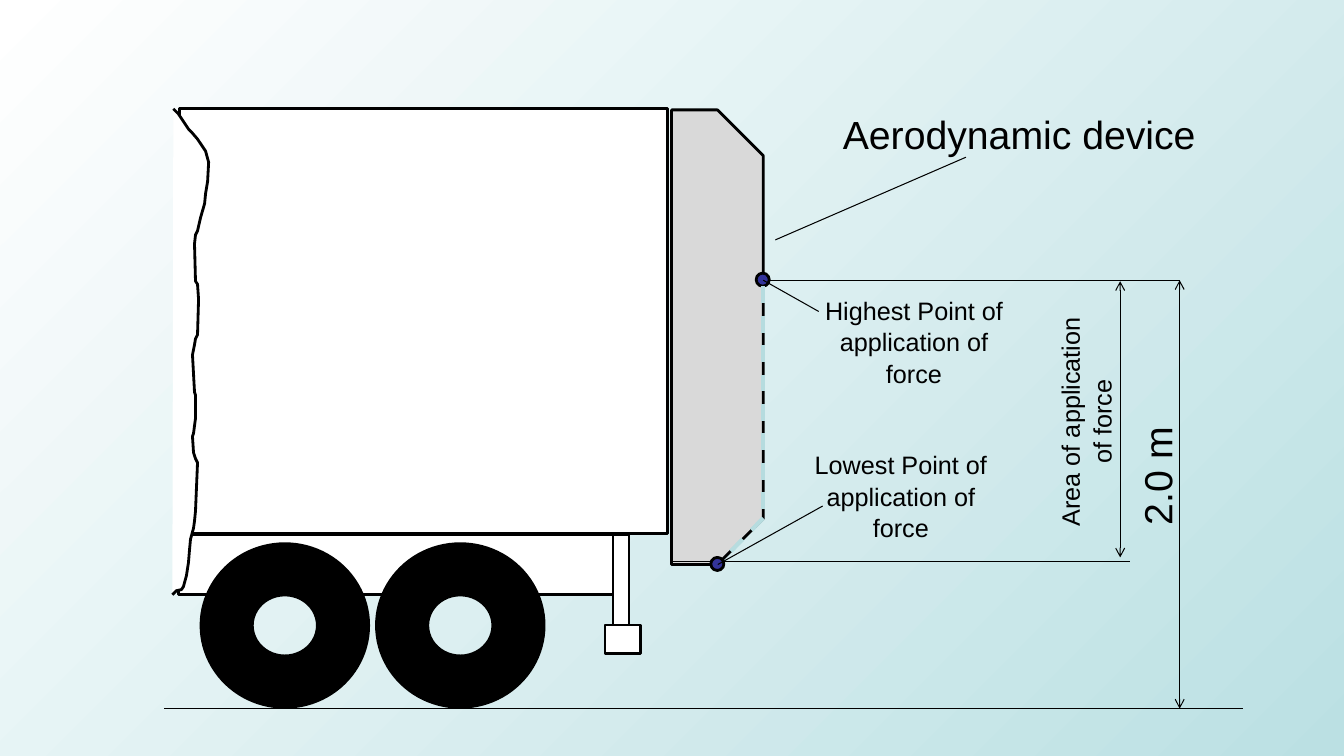
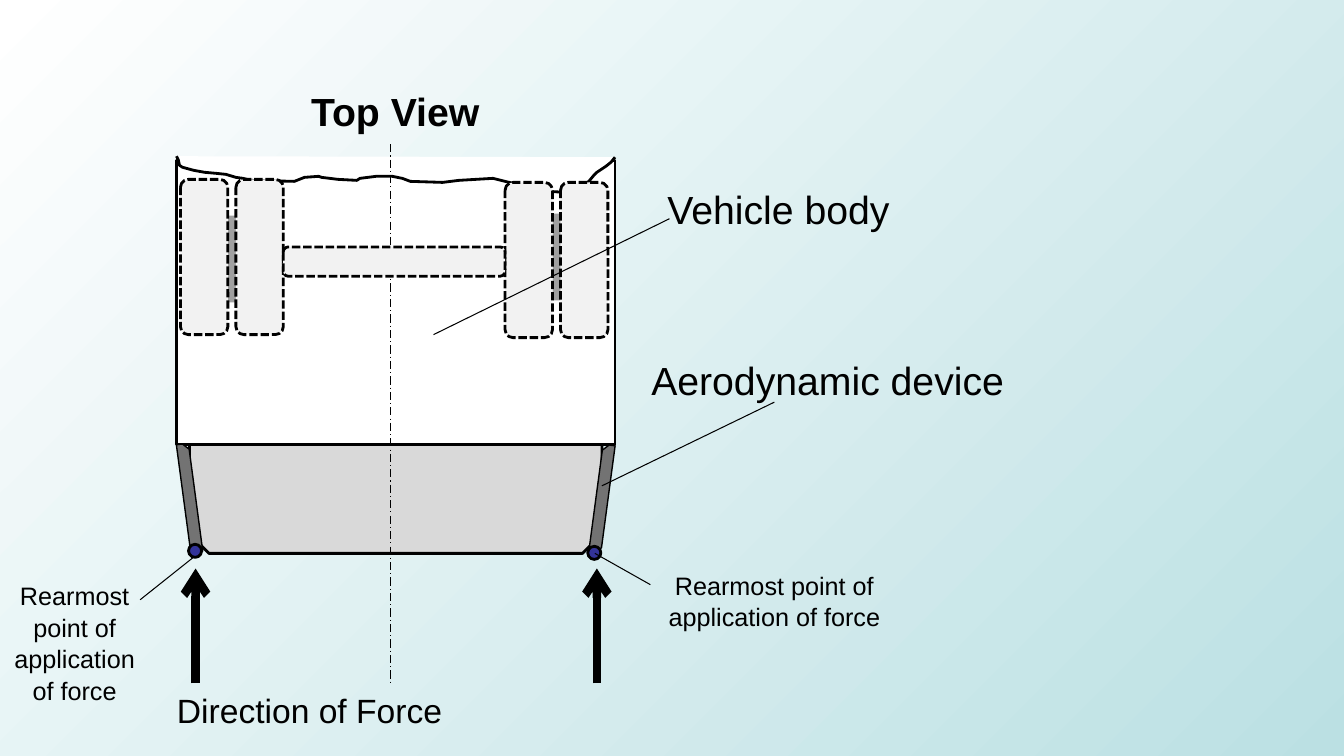
from lxml.etree import SubElement as Sub
from pptx import Presentation
from pptx.dml.color import RGBColor
from pptx.enum.dml import MSO_LINE as Dash
from pptx.enum.shapes import MSO_CONNECTOR as Wire, MSO_SHAPE as Kind
from pptx.enum.text import MSO_ANCHOR as Anchor, PP_ALIGN as Align
from pptx.oxml.ns import qn
from pptx.util import Inches, Pt

BLACK, WHITE, TINT = "000000", "FFFFFF", "BBE0E3"
PANEL, WHEEL, HUB, SLAT = "D9D9D9", "F2F2F2", "A0A0A0", "737373"
POINT, HIDDEN = "333399", "B6DCDF"
DOT = 0.13

# Torn edges of the vehicle body, in hundredths of an inch
SIDE_TEAR = [
    (172, 108), (177, 113), (181, 119), (187, 128), (190, 131), (196, 138),
    (202, 147), (204, 150), (207, 161), (206, 180), (204, 192), (203, 202),
    (199, 216), (196, 229), (194, 233), (193, 242), (194, 279), (196, 282),
    (197, 297), (196, 332), (194, 336), (193, 342), (191, 352), (193, 389),
    (194, 392), (194, 415), (192, 430), (191, 433), (192, 449), (194, 455),
    (196, 459), (194, 507), (193, 517), (192, 524), (189, 535), (188, 546),
    (187, 558), (185, 571), (182, 582), (180, 585), (175, 586), (171, 590)]
TOP_TEAR = [
    (610, 156), (606, 161), (601, 165), (592, 171), (589, 174), (584, 180),
    (575, 186), (572, 188), (563, 191), (545, 190), (535, 188), (525, 187),
    (513, 183), (501, 180), (489, 177), (455, 179), (439, 181), (407, 180),
    (399, 177), (389, 175), (373, 175), (357, 177), (354, 179), (335, 178),
    (319, 176), (316, 175), (302, 176), (292, 180), (249, 179), (241, 177),
    (234, 176), (224, 173), (214, 172), (203, 171), (192, 169), (181, 166),
    (178, 164), (177, 159), (175, 155)]


def color(code):
    return RGBColor.from_string(code)


class Deck:
    """Drawing style and the slide being drawn."""

    def __init__(self):
        self.prs = Presentation()
        self.prs.slide_width, self.prs.slide_height = Inches(13.33), Inches(7.5)
        fill = self.prs.slide_master.background.fill
        fill.gradient()
        fill.gradient_angle = 315
        for stop, code, place in zip(fill.gradient_stops, (WHITE, TINT), (0, 1)):
            stop.color.rgb = color(code)
            stop.position = place

    def page(self):
        self.slide = self.prs.slides.add_slide(self.prs.slide_layouts[6])

    def paint(self, shape, fill, width, dash=None):
        shape.shadow.inherit = False
        shape.fill.solid()
        shape.fill.fore_color.rgb = color(fill)
        if width:
            self.pen(shape.line, BLACK, width, dash)
        else:
            shape.line.fill.background()

    def pen(self, line, code, width, dash):
        line.color.rgb = color(code)
        line.width = Pt(width)
        if dash:
            line.dash_style = dash

    def shape(self, kind, x, y, w, h, fill=WHITE, width=2, dash=None,
              adj=(), turn=0):
        item = self.slide.shapes.add_shape(kind, *map(Inches, (x, y, w, h)))
        self.paint(item, fill, width, dash)
        for i, value in enumerate(adj):
            item.adjustments[i] = value
        item.rotation = turn

    def dot(self, x, y):
        self.shape(Kind.OVAL, x, y, DOT, DOT, POINT)

    def tear(self, points):
        """Draw an open white outline through the points."""
        form = self.slide.shapes.build_freeform(*points[0], scale=Inches(0.01))
        form.add_line_segments(points[1:], close=False)
        self.paint(form.convert_to_shape(), WHITE, 2)

    def line(self, x1, y1, x2, y2, code=BLACK, width=0.75, dash=None, ends=()):
        """Draw a line; ends names the arrowed ends, headEnd before tailEnd."""
        item = self.slide.shapes.add_connector(
            Wire.STRAIGHT, *map(Inches, (x1, y1, x2, y2)))
        self.pen(item.line, code, width, dash)
        props = item._element.spPr
        for end in ends:
            Sub(props.find(qn("a:ln")), qn("a:" + end), type="arrow")
        Sub(props, qn("a:effectLst"))

    def text(self, words, x, y, w, h, size=18, align=Align.CENTER, bold=False,
             turn=0, wrap=True, inset=(0, 0)):
        box = self.slide.shapes.add_textbox(*map(Inches, (x, y, w, h)))
        box.rotation = turn
        frame = box.text_frame
        frame.word_wrap = wrap
        frame.vertical_anchor = Anchor.TOP
        frame.margin_left = frame.margin_right = Inches(inset[0])
        frame.margin_top = frame.margin_bottom = Inches(inset[1])
        para = frame.paragraphs[0]
        para.alignment, para.line_spacing = align, 1.05
        run = para.add_run()
        run.text = words
        font = run.font
        font.name, font.size, font.bold = "Arial", Pt(size), bold
        font.color.rgb = color(BLACK)

    def label(self, words, x, y, **style):
        self.text(words, x, y, 3.86, 0.63, size=28,
                  **{"align": Align.LEFT, **style})


def side(deck):
    """Side view with the heights of the force points."""
    deck.page()
    both = ("headEnd", "tailEnd")
    deck.line(1.63, 7.03, 12.33, 7.03)
    deck.shape(Kind.RECTANGLE, 1.78, 1.08, 4.84, 4.21)
    deck.shape(Kind.RECTANGLE, 1.77, 5.3, 4.47, 0.6)
    for x in (3.72, 1.98):
        deck.shape(Kind.DONUT, x, 5.38, 1.69, 1.65, BLACK, 0, adj=[0.325])
    deck.tear(SIDE_TEAR)
    deck.shape(Kind.RECTANGLE, 6.08, 5.3, 0.16, 1.02)
    deck.shape(Kind.RECTANGLE, 6, 6.2, 0.35, 0.28)
    deck.shape(Kind.SNIP_2_SAME_RECTANGLE, 4.86, 2.89, 4.51, 0.91, PANEL,
               adj=[0.5, 0], turn=90)

    deck.line(11.7, 2.78, 11.7, 7.03, ends=both)
    deck.line(7.5, 2.78, 11.7, 2.78)
    deck.text("2.0 m", 10.24, 4.48, 2.44, 0.49, size=28, turn=270)
    deck.label("Aerodynamic device", 8.36, 1.07)
    deck.line(7.69, 2.38, 9.58, 1.56)
    deck.line(6.67, 5.57, 11.21, 5.57)
    deck.line(11.11, 2.79, 11.11, 5.53, ends=both)

    deck.text("Lowest Point of application of force", 7.95, 4.44, 1.97, 1.15)
    deck.dot(7.05, 5.53)
    deck.line(8.16, 5.02, 7.12, 5.6)
    deck.text("Highest Point of application of force", 8.04, 2.91, 2.05, 1.15)
    deck.dot(7.5, 2.71)
    deck.line(8.12, 3.09, 7.57, 2.78)
    deck.text("Area of application of force", 9.9, 3.61, 2.24, 1.15, turn=270)
    for ends in ((7.57, 2.84, 7.57, 5.14), (7.57, 5.14, 7.17, 5.55)):
        deck.line(*ends, code=HIDDEN, width=3, dash=Dash.DASH)


def top(deck):
    """Top view with the direction of force."""
    deck.page()
    hidden = {"fill": WHEEL, "dash": Dash.SQUARE_DOT}
    deck.shape(Kind.RECTANGLE, 1.75, 1.59, 4.35, 2.82)
    deck.tear(TOP_TEAR)
    deck.shape(Kind.SNIP_2_SAME_RECTANGLE, 1.88, 4.41, 4.09, 1.08, PANEL,
               adj=[0.178, 0], turn=180)
    deck.label("Aerodynamic device", 6.46, 3.51)
    deck.line(3.87, 1.43, 3.87, 6.79, dash=Dash.LONG_DASH_DOT)
    deck.label("Top View", 1.99, 0.84, align=Align.CENTER, bold=True)

    for x, y, hub in ((1.79, 1.78, 2.14), (5.01, 1.81, 2.12)):
        deck.shape(Kind.RECTANGLE, x + 0.47, hub, 0.08, 0.86, HUB, 0)
        for left in (x, x + 0.55):
            deck.shape(Kind.ROUNDED_RECTANGLE, left, y, 0.47, 1.54, **hidden)
    for x, y, adj, turn in ((1.82, 4.4, [0, 0.5], 352.4),
                            (5.91, 4.41, [0.5, 0], 7.6)):
        deck.shape(Kind.SNIP_2_DIAG_RECTANGLE, x, y, 0.12, 1.08, SLAT, 1,
                   adj=adj, turn=turn)
    deck.line(5.97, 4.82, 7.68, 3.99)

    for box, spot, lead, x in (
            ((6.47, 5.64, 2.42), (5.83, 5.42), (6.45, 5.8, 5.9, 5.49), 5.92),
            ((0.09, 5.74, 1.3), (1.87, 5.4), (1.39, 5.95, 1.93, 5.52), 1.94)):
        deck.text("Rearmost point of application of force", *box, 1.15)
        deck.dot(*spot)
        deck.line(*lead)
        deck.line(x, 6.78, x, 5.64, width=6, ends=["tailEnd"])

    deck.label("Vehicle body", 6.62, 1.82)
    deck.line(4.3, 3.32, 6.64, 2.17)
    deck.text("Direction of Force", 1.64, 6.78, 2.86, 0.5, size=24,
              wrap=False, inset=(0.1, 0.05))
    deck.shape(Kind.ROUNDED_RECTANGLE, 2.81, 2.45, 2.2, 0.29, **hidden)


def main():
    deck = Deck()
    side(deck)
    top(deck)
    deck.prs.save("out.pptx")


if __name__ == "__main__":
    main()
